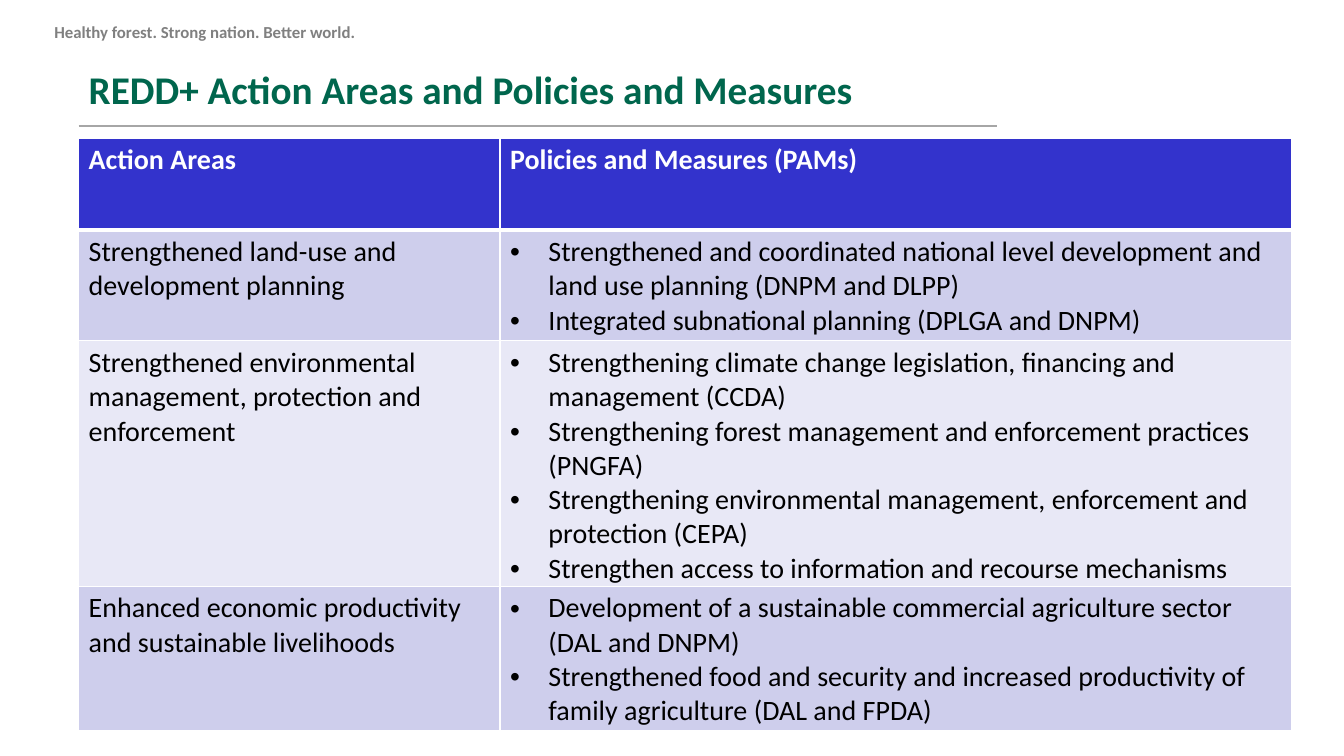
from lxml import etree
from pptx import Presentation
from pptx.dml.color import RGBColor
from pptx.enum.shapes import MSO_CONNECTOR
from pptx.enum.text import MSO_ANCHOR, MSO_AUTO_SIZE, PP_ALIGN
from pptx.oxml.ns import qn
from pptx.util import Inches, Pt

STRAIGHT = MSO_CONNECTOR.STRAIGHT
TOP = MSO_ANCHOR.TOP
LEFT = PP_ALIGN.LEFT
NO_AUTOFIT = MSO_AUTO_SIZE.NONE
TITLE_ONLY = 5
FONT = "Calibri"
WHITE, BLACK, GREEN, GREY, RULE_GREY = "FFFFFF", "000000", "00664D", "808080", "A6A6A6"
HEADER_FILL, BANDS = "3333CC", ("CECEEC", "E8E8F6")

HEADINGS = ("Action Areas", "Policies and Measures (PAMs)")
ACTION_AREAS = [
    ("Strengthened land-use and development planning", [
        "Strengthened and coordinated national level development and land use planning (DNPM and DLPP)",
        "Integrated subnational planning (DPLGA and DNPM)",
    ]),
    ("Strengthened environmental management, protection and enforcement", [
        "Strengthening climate change legislation, financing and management (CCDA)",
        "Strengthening forest management and enforcement practices (PNGFA)",
        "Strengthening environmental management, enforcement and protection (CEPA)",
        "Strengthen access to information and recourse mechanisms",
    ]),
    ("Enhanced economic productivity and sustainable livelihoods", [
        "Development of a sustainable commercial agriculture sector (DAL and DNPM)",
        "Strengthened food and security and increased productivity of family agriculture (DAL and FPDA)",
    ]),
]


def rgb(value):
    """Turn a hex string into a colour."""
    return RGBColor.from_string(value)


def format_text(frame, size, color, bold=False):
    """Format every run in a text frame."""
    for paragraph in frame.paragraphs:
        paragraph.alignment = LEFT
        for run in paragraph.runs:
            run.font.name = FONT
            run.font.size = Pt(size)
            run.font.bold = bold
            run.font.color.rgb = rgb(color)


def add_bullet(paragraph, indent=0.38):
    """Give a paragraph a hanging round bullet."""
    properties = paragraph._p.get_or_add_pPr()
    properties.set("marL", str(Inches(indent)))
    properties.set("indent", str(Inches(-indent)))
    etree.SubElement(properties, qn("a:buFont")).set("typeface", "Arial")
    etree.SubElement(properties, qn("a:buChar")).set("char", "•")


def set_borders(cell, bottom_width):
    """Draw white borders around a cell."""
    properties = cell._tc.get_or_add_tcPr()
    for side, width in (("L", 1), ("R", 1), ("T", 1), ("B", bottom_width)):
        border = etree.SubElement(properties, qn(f"a:ln{side}"), w=str(Pt(width)))
        fill = etree.SubElement(border, qn("a:solidFill"))
        etree.SubElement(fill, qn("a:srgbClr"), val=WHITE)


def fill_cell(cell, text, fill, color, bold=False, bottom_width=1):
    """Write and style one table cell."""
    cell.text_frame.text = text
    set_borders(cell, bottom_width)
    cell.fill.solid()
    cell.fill.fore_color.rgb = rgb(fill)
    format_text(cell.text_frame, 20, color, bold)


def add_motto(slide, left, top, width, height):
    """Place the motto above the title."""
    frame = slide.shapes.add_textbox(Inches(left), Inches(top), Inches(width), Inches(height)).text_frame
    frame.word_wrap = True
    frame.text = "Healthy forest. Strong nation. Better world."
    format_text(frame, 12, GREY, True)


def add_title(slide, left, top, width, height):
    """Place the title and the rule beneath it."""
    title = slide.shapes.title
    title.left, title.top = Inches(left), Inches(top)
    title.width, title.height = Inches(width), Inches(height)
    frame = title.text_frame
    frame.text = "REDD+ Action Areas and Policies and Measures"
    frame.vertical_anchor = TOP
    frame.auto_size = NO_AUTOFIT
    format_text(frame, 28, GREEN, True)
    rule_top = Inches(top + height + 0.08)
    rule = slide.shapes.add_connector(STRAIGHT, Inches(left), rule_top, Inches(left + 9.11), rule_top)
    rule.line.color.rgb = rgb(RULE_GREY)
    rule.line.width = Pt(2)
    etree.SubElement(rule._element.spPr, qn("a:effectLst"))


def add_measures_table(slide, left, top, width, row_height):
    """Place the table of action areas and their measures."""
    row_count = len(ACTION_AREAS) + 1
    table = slide.shapes.add_table(row_count, 2, Inches(left), Inches(top),
                                   Inches(width), Inches(row_height * row_count)).table
    area_width = 4.18
    table.columns[0].width = Inches(area_width)
    table.columns[1].width = Inches(width - area_width)
    for column, heading in enumerate(HEADINGS):
        fill_cell(table.cell(0, column), heading, HEADER_FILL, WHITE, True, 3)
    for row, (area, measures) in enumerate(ACTION_AREAS, start=1):
        band = BANDS[(row - 1) % 2]
        fill_cell(table.cell(row, 0), area, band, BLACK)
        measures_cell = table.cell(row, 1)
        fill_cell(measures_cell, "\n".join(measures), band, BLACK)
        for paragraph in measures_cell.text_frame.paragraphs:
            add_bullet(paragraph)


def main():
    """Build and save the slide."""
    presentation = Presentation()
    presentation.slide_width, presentation.slide_height = Inches(13.33), Inches(7.5)
    slide = presentation.slides.add_slide(presentation.slide_layouts[TITLE_ONLY])
    add_motto(slide, 0.44, 0.17, 5.67, 0.42)
    add_title(slide, 0.78, 0.6, 9.56, 0.57)
    add_measures_table(slide, 0.78, 1.37, 12.03, 0.91)
    presentation.save("out.pptx")


if __name__ == "__main__":
    main()
